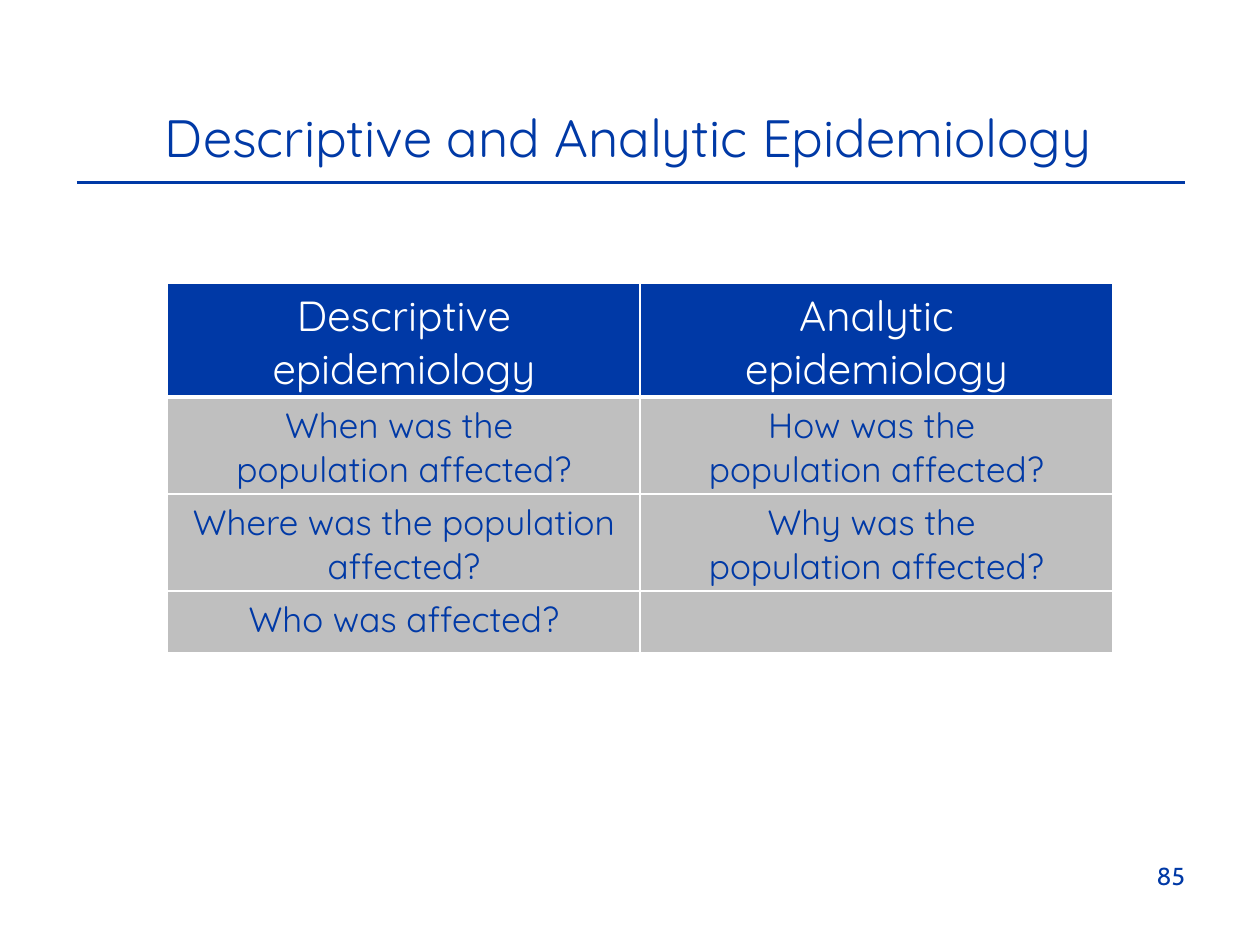
from lxml import etree
from pptx import Presentation
from pptx.dml.color import RGBColor
from pptx.enum.shapes import MSO_CONNECTOR
from pptx.enum.text import MSO_ANCHOR, PP_ALIGN
from pptx.oxml.ns import qn
from pptx.util import Pt

COLORS = {"blue": "0039A6", "grey": "BFBFBF", "white": "FFFFFF"}
HEADING_FONT, NUMBER_FONT = "Quicksand", "Cabin"
ROW_HEIGHTS = [64.8, 55.4, 55.4, 35.4]
ROWS = [
    ("Descriptive\nepidemiology", "Analytic\nepidemiology"),
    ("When was the \npopulation affected?", "How was the \npopulation affected?"),
    ("Where was the population affected?", "Why was the \npopulation affected?"),
    ("Who was affected?", ""),
]


def rgb(name):
    return RGBColor.from_string(COLORS[name])


def write_text(tf, text, size=20, font=HEADING_FONT, color="blue",
               align=PP_ALIGN.CENTER):
    tf.word_wrap = True
    for i, line in enumerate(text.split("\n")):
        p = tf.paragraphs[0] if i == 0 else tf.add_paragraph()
        p.alignment = align
        if not line:
            continue
        r = p.add_run()
        r.text = line
        r.font.size = Pt(size)
        r.font.name = font
        r.font.color.rgb = rgb(color)


def add_title(slide, text):
    sp = slide.shapes.title
    sp.left, sp.top, sp.width, sp.height = Pt(36.7), Pt(56.2), Pt(644.4), Pt(43.9)
    sp.text_frame.vertical_anchor = MSO_ANCHOR.MIDDLE
    write_text(sp.text_frame, text, size=30)


def add_rule(slide, left, right, y):
    line = slide.shapes.add_connector(
        MSO_CONNECTOR.STRAIGHT, Pt(left), Pt(y), Pt(right), Pt(y))
    line.line.color.rgb = rgb("blue")
    line.line.width = Pt(2)
    etree.SubElement(line._element.spPr, qn("a:effectLst"))


def set_borders(cell, **widths):
    """Draw white borders; widths in points, by side: L, R, T, B."""
    tcPr = cell._tc.get_or_add_tcPr()
    for i, (side, width) in enumerate(widths.items()):
        ln = etree.Element(qn(f"a:ln{side}"), w=str(Pt(width)))
        fill = etree.SubElement(ln, qn("a:solidFill"))
        etree.SubElement(fill, qn("a:srgbClr"), val=COLORS["white"])
        tcPr.insert(i, ln)  # borders come before the fill


def add_comparison_table(slide):
    table = slide.shapes.add_table(
        len(ROWS), 2, Pt(95.8), Pt(162), Pt(540), Pt(sum(ROW_HEIGHTS))).table
    for row, height in zip(table.rows, ROW_HEIGHTS):
        row.height = Pt(height)
    for i, texts in enumerate(ROWS):
        header = i == 0
        for j, text in enumerate(texts):
            cell = table.cell(i, j)
            cell.margin_bottom = 0  # keeps two lines inside the row height
            cell.fill.solid()
            cell.fill.fore_color.rgb = rgb("blue" if header else "grey")
            set_borders(cell, L=1, R=1, T=3 if i == 1 else 1, B=3 if header else 1)
            write_text(cell.text_frame, text, size=24 if header else 20,
                       color="white" if header else "blue")


def add_page_number(slide, number):
    sp = slide.shapes.add_textbox(Pt(516.2), Pt(486), Pt(168), Pt(28.8))
    sp.text_frame.vertical_anchor = MSO_ANCHOR.MIDDLE
    write_text(sp.text_frame, number, size=14, font=NUMBER_FONT,
               align=PP_ALIGN.RIGHT)


def main():
    prs = Presentation()
    prs.slide_width, prs.slide_height = Pt(720), Pt(540)
    slide = prs.slides.add_slide(prs.slide_layouts[5])  # Title Only

    # Heading
    add_title(slide, "Descriptive and Analytic Epidemiology")
    add_rule(slide, 44, 677, 104.4)

    # Content and footer
    add_comparison_table(slide)
    add_page_number(slide, "85")
    prs.save("out.pptx")


if __name__ == "__main__":
    main()
